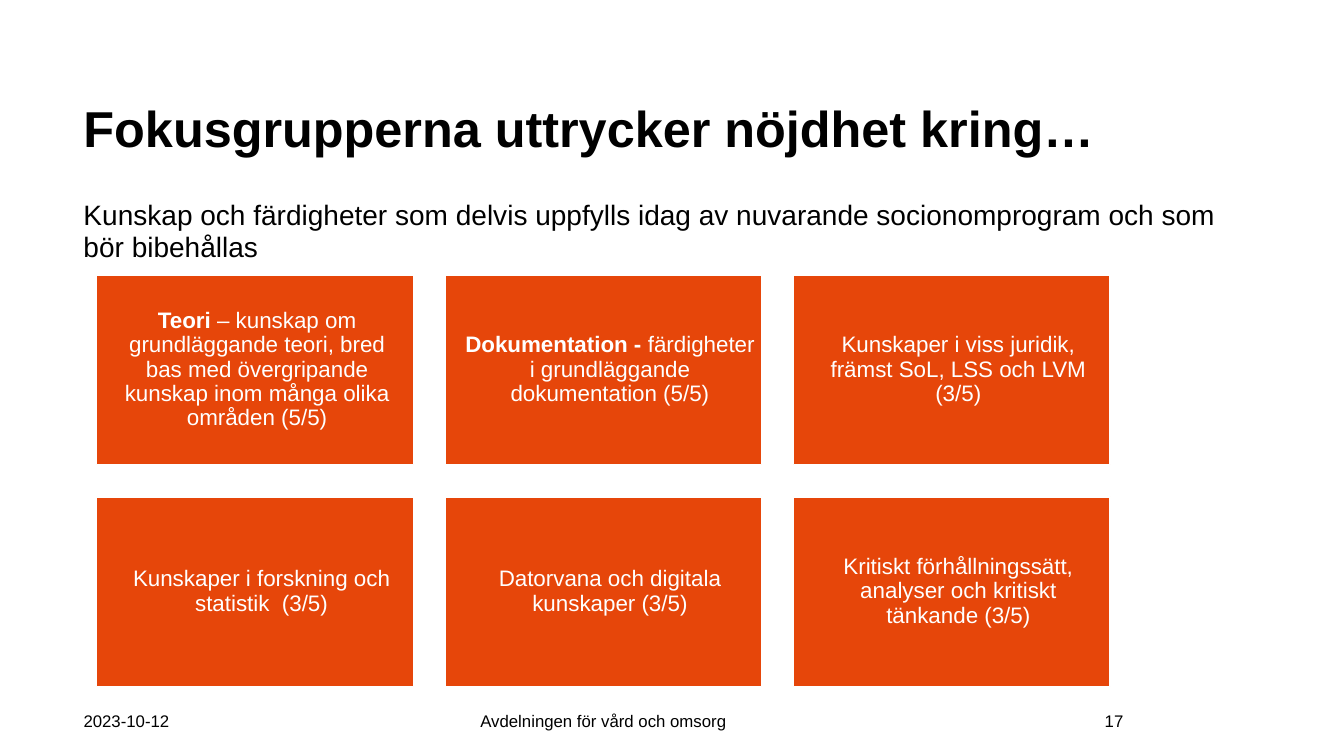
from pptx import Presentation
from pptx.dml.color import RGBColor
from pptx.enum.shapes import MSO_SHAPE
from pptx.enum.text import MSO_ANCHOR, PP_ALIGN
from pptx.util import Inches, Pt

COLORS = {"text": "000000", "tile": "E6460A", "tile_text": "FFFFFF"}
FONT = "Arial"

TILES = [
    ("Teori", " – kunskap om grundläggande teori, bred bas med övergripande "
     "kunskap inom många olika områden (5/5)", 0.16),
    ("Dokumentation - ", "färdigheter i grundläggande dokumentation (5/5)", 0.07),
    ("", "Kunskaper i viss juridik, främst SoL, LSS och LVM (3/5)", 0.07),
    ("", "Kunskaper i forskning och statistik  (3/5)", 0.07),
    ("", "Datorvana och digitala kunskaper (3/5)", 0.07),
    ("", "Kritiskt förhållningssätt, analyser och kritiskt tänkande (3/5)", 0.07),
]


def rgb(name):
    """Return the named colour."""
    return RGBColor.from_string(COLORS[name])


def format_run(r, size, color="text", bold=False):
    """Set the font of a run."""
    r.font.name = FONT
    r.font.size = Pt(size)
    r.font.bold = bold
    r.font.color.rgb = rgb(color)


def add_text_frame(s, box):
    """Add a wrapping text box and return its text frame."""
    tf = s.shapes.add_textbox(*map(Inches, box)).text_frame
    tf.word_wrap = True
    return tf


def add_heading(s, box, title, subtitle):
    """Place the title with its subtitle below it."""
    tf = add_text_frame(s, box)
    tf.text = f"{title}\n{subtitle}"
    for p, size, bold in zip(tf.paragraphs, (36, 20), (True, False)):
        p.line_spacing = 0.95
        format_run(p.runs[0], size, bold=bold)
    tf.paragraphs[1].space_before = Pt(29)


def add_tile(s, box, lead, body, right_margin):
    """Draw one filled tile with an optional bold lead-in."""
    sp = s.shapes.add_shape(MSO_SHAPE.RECTANGLE, *map(Inches, box))
    sp.shadow.inherit = False
    sp.fill.solid()
    sp.fill.fore_color.rgb = rgb("tile")
    sp.line.color.rgb = rgb("tile_text")
    sp.line.width = Pt(1)
    tf = sp.text_frame
    tf.word_wrap = True
    tf.vertical_anchor = MSO_ANCHOR.MIDDLE
    tf.margin_left, tf.margin_right = Inches(0.2), Inches(right_margin)
    tf.margin_top = tf.margin_bottom = Inches(0.07)
    p = tf.paragraphs[0]
    p.alignment = PP_ALIGN.CENTER
    p.line_spacing = 0.9
    for text, bold in ((lead, True), (body, False)):
        if text:
            r = p.add_run()
            r.text = text
            format_run(r, 16, "tile_text", bold)


def add_tile_grid(s, box, tiles, columns=3, tile_width=3.14, tile_height=1.88):
    """Spread the tiles evenly over the box in rows."""
    left, top, width, height = box
    rows = len(tiles) // columns
    step_x = (width - tile_width) / (columns - 1)
    step_y = (height - tile_height) / (rows - 1)
    for i, tile in enumerate(tiles):
        row, column = divmod(i, columns)
        place = (left + column * step_x, top + row * step_y, tile_width, tile_height)
        add_tile(s, place, *tile)


def add_footer(s, box, date, department, number):
    """Place date, department and slide number along the box."""
    left, top, width, height = box
    side = 1.39
    parts = [
        (date, left, side, PP_ALIGN.LEFT),
        (department, left + 1.96, 6.59, PP_ALIGN.CENTER),
        (number, left + width - side, side, PP_ALIGN.RIGHT),
    ]
    for text, x, w, alignment in parts:
        tf = add_text_frame(s, (x, top, w, height))
        tf.vertical_anchor = MSO_ANCHOR.MIDDLE
        tf.text = text
        p = tf.paragraphs[0]
        p.alignment = alignment
        format_run(p.runs[0], 12)


def main():
    """Build and save the slide."""
    prs = Presentation()
    prs.slide_width, prs.slide_height = Inches(13.33), Inches(7.5)
    s = prs.slides.add_slide(prs.slide_layouts[6])
    add_heading(
        s, (0.73, 0.96, 11.46, 1.35),
        "Fokusgrupperna uttrycker nöjdhet kring…",
        "Kunskap och färdigheter som delvis uppfylls idag av nuvarande "
        "socionomprogram och som bör bibehållas",
    )
    add_tile_grid(s, (0.96, 2.73, 10.05, 4.08), TILES)
    add_footer(s, (0.73, 6.95, 10.51, 0.4),
               "2023-10-12", "Avdelningen för vård och omsorg", "17")
    prs.save("out.pptx")


if __name__ == "__main__":
    main()
